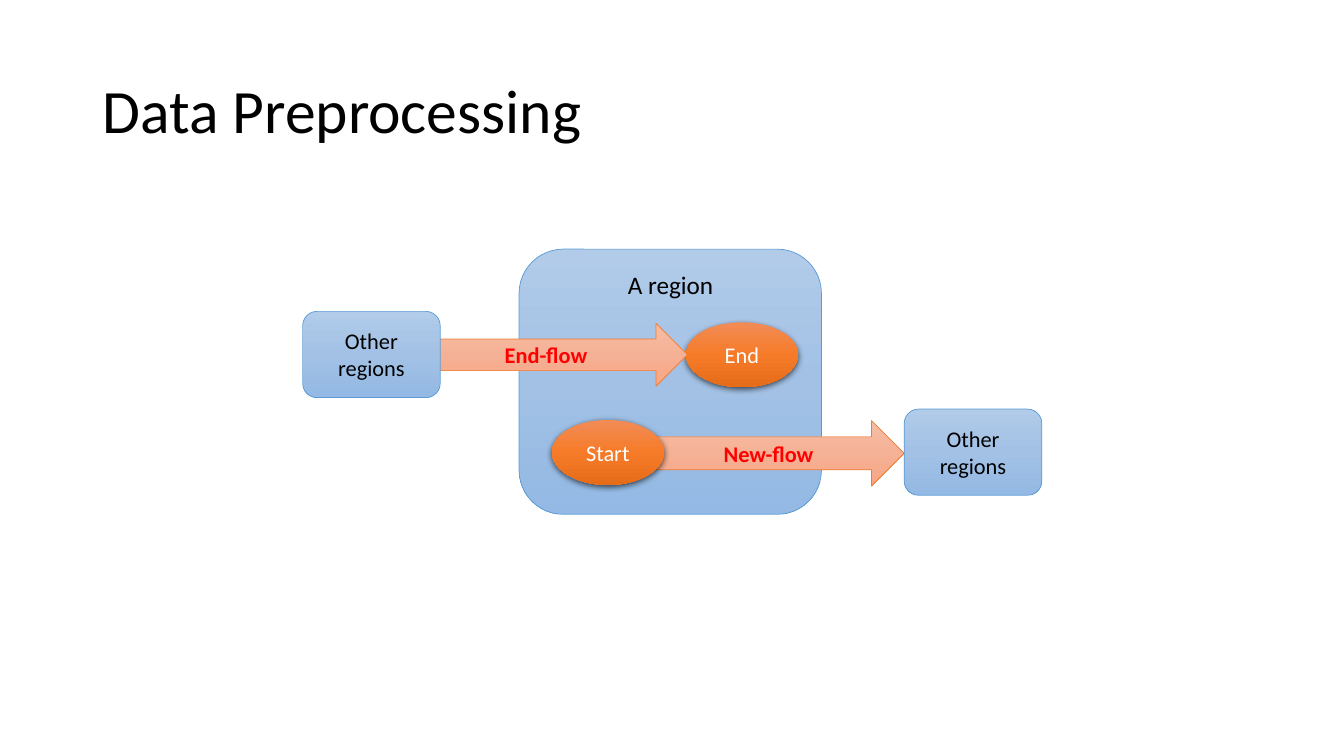
from copy import deepcopy

from pptx import Presentation
from pptx.dml.color import RGBColor
from pptx.enum.shapes import MSO_SHAPE as Kind
from pptx.enum.text import MSO_ANCHOR as Anchor, MSO_AUTO_SIZE as Fit, PP_ALIGN as Align
from pptx.oxml import parse_xml
from pptx.oxml.ns import nsdecls, qn
from pptx.util import Pt

BLUE = ("B1CBE9", "A3C1E5", "93B9E4")
PEACH = ("F7BDA5", "F5B196", "F8A582")
ORANGE = ("F18C57", "F67B28", "E56C19")
SHADOW = (
    f'<a:outerShdw {nsdecls("a")} blurRad="{Pt(4.5)}" dist="{Pt(1.5)}" dir="5400000" '
    'algn="ctr" rotWithShape="0"><a:srgbClr val="000000"><a:alpha val="63000"/>'
    '</a:srgbClr></a:outerShdw>'
)


def color(code):
    return RGBColor.from_string(code)


def write(frame, text, size=16, ink="000000", bold=False, align=Align.CENTER,
          anchor=Anchor.MIDDLE, wrap=True, fit=Fit.NONE, space=None):
    frame.word_wrap = wrap
    frame.auto_size = fit
    frame.vertical_anchor = anchor
    par = frame.paragraphs[0]
    par.alignment = align
    par.line_spacing = space
    run = par.add_run()
    run.text = text
    font = run.font
    font.name, font.size, font.bold = "Calibri", Pt(size), bold
    font.color.rgb = color(ink)


class Flow:
    """A slide with one grouped flow diagram."""

    def __init__(self, deck):
        self.slide = deck.slides.add_slide(deck.slide_layouts[5])
        self.group = self.slide.shapes.add_group_shape().shapes

    def title(self, text, *box):
        head = self.slide.shapes.title
        head.left, head.top, head.width, head.height = map(Pt, box)
        write(head.text_frame, text, size=44, align=Align.LEFT, space=0.9)

    def shape(self, kind, box, shades, line=None):
        item = self.group.add_shape(kind, *map(Pt, box))
        item.shadow.inherit = False
        item.fill.gradient()
        item.fill.gradient_angle = 270
        first = item._element.spPr.find(".//" + qn("a:gs"))
        first.addnext(deepcopy(first))
        for stop, shade, place in zip(item.fill.gradient_stops, shades, (0, 0.5, 1)):
            stop.color.rgb = color(shade)
            stop.position = place
        if line:
            item.line.color.rgb = color(line)
            item.line.width = Pt(0.5)
        else:
            item.line.fill.background()
        return item

    def region(self, *box, text=None):
        item = self.shape(Kind.ROUNDED_RECTANGLE, box, BLUE, "5B9BD5")
        if text:
            write(item.text_frame, text)

    def arrow(self, text, *box):
        item = self.shape(Kind.RIGHT_ARROW, box, PEACH, "ED7D31")
        write(item.text_frame, text, ink="FF0000", bold=True)

    def node(self, text, left, top):
        item = self.shape(Kind.OVAL, (left, top, 80, 46.4), ORANGE)
        item._element.spPr.find(qn("a:effectLst")).append(parse_xml(SHADOW))
        write(item.text_frame, text, ink="FFFFFF")

    def label(self, text, *box):
        item = self.group.add_textbox(*map(Pt, box))
        write(item.text_frame, text, size=18, anchor=Anchor.TOP,
              wrap=False, fit=Fit.SHAPE_TO_FIT_TEXT)


def main():
    deck = Presentation()
    deck.slide_width, deck.slide_height = Pt(960), Pt(540)
    flow = Flow(deck)
    flow.title("Data Preprocessing", 66, 28.8, 828, 104.4)
    flow.region(370.8, 178, 216, 189.4)
    flow.arrow("New-flow", 463.7, 300.4, 182.2, 46.8)
    flow.node("Start", 394.2, 300)
    flow.node("End", 490, 230.2)
    flow.arrow("End-flow", 300.2, 231, 190.8, 44.8)
    for left, top in ((216.2, 222.4), (645.9, 292.2)):
        flow.region(left, top, 98.3, 61.6, text="Other regions")
    flow.label("A region", 431.8, 188.8, 94.4, 27.4)
    deck.save("out.pptx")


if __name__ == "__main__":
    main()
